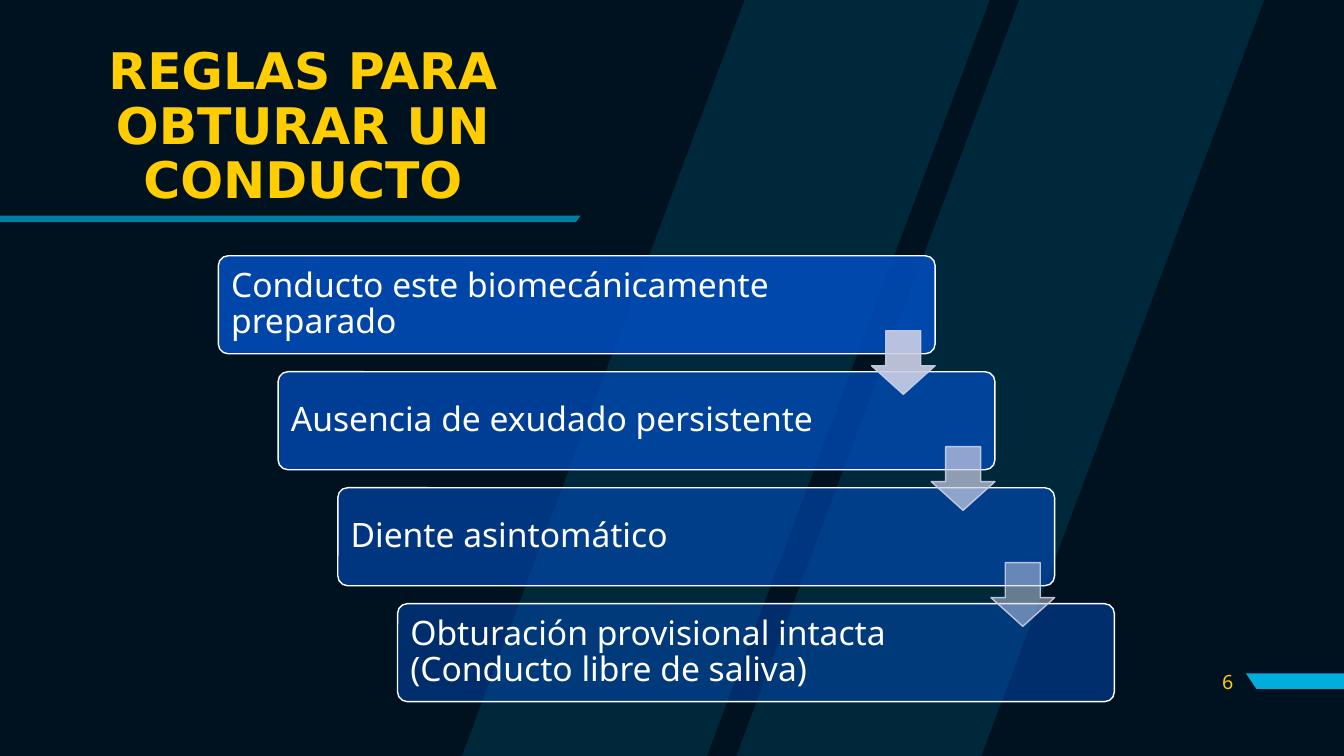
from lxml.etree import SubElement
from pptx import Presentation
from pptx.dml.color import RGBColor
from pptx.enum.shapes import MSO_SHAPE as Shape
from pptx.enum.text import MSO_ANCHOR as Anchor, PP_ALIGN as Align
from pptx.oxml.ns import qn
from pptx.util import Pt

COLORS = {
    "night": "00111F",
    "cyan": "00AEDE",
    "yellow": "FFCD00",
    "blue": "004CB9",
    "lilac": "CCD0E6",
    "white": "FFFFFF",
}
STEPS = [
    ("Conducto este biomecánicamente preparado", 90),
    ("Ausencia de exudado persistente", 77),
    ("Diente asintomático", 63),
    ("Obturación provisional intacta (Conducto libre de saliva)", 50),
]
ARROW_OPACITIES = [90, 70, 50]


def paint(fill, color, opacity=100):
    """Give a fill a solid colour with an opacity in percent."""
    fill.solid()
    fill.fore_color.rgb = RGBColor.from_string(COLORS[color])
    if opacity < 100:
        tone = fill._xPr.find(qn("a:solidFill"))[0]
        SubElement(tone, qn("a:alpha")).set("val", str(opacity * 1000))


def add_polygon(page, points, color, opacity=100):
    """Draw a closed outline without a border."""
    builder = page.shapes.build_freeform(Pt(points[0][0]), Pt(points[0][1]), scale=1)
    builder.add_line_segments([(Pt(x), Pt(y)) for x, y in points[1:]], close=True)
    polygon = builder.convert_to_shape()
    polygon.shadow.inherit = False
    paint(polygon.fill, color, opacity)
    polygon.line.fill.background()


def add_block(page, kind, box, adjustments, fill, outline):
    """Draw a preset shape with fill and outline given as colour and opacity."""
    block = page.shapes.add_shape(kind, *map(Pt, box))
    block.shadow.inherit = False
    for index, value in enumerate(adjustments):
        block.adjustments[index] = value
    paint(block.fill, *fill)
    block.line.width = Pt(1)
    paint(block.line.fill, *outline)


def add_text(page, box, text, font, size, color, align=Align.LEFT, bold=False,
             spacing=1.0, margin=3.6):
    """Place one vertically centred paragraph in a box."""
    frame = page.shapes.add_textbox(*map(Pt, box)).text_frame
    frame.word_wrap = True
    frame.vertical_anchor = Anchor.MIDDLE
    frame.margin_left = frame.margin_right = Pt(7.2)
    frame.margin_top = frame.margin_bottom = Pt(margin)
    para = frame.paragraphs[0]
    para.alignment = align
    para.line_spacing = spacing
    span = para.add_run()
    span.text = text
    span.font.name = font
    span.font.size = Pt(size)
    span.font.bold = bold
    span.font.color.rgb = RGBColor.from_string(COLORS[color])


def add_backdrop(page, width, height):
    """Colour the page and draw its two slanted bands."""
    paint(page.background.fill, "night")
    band, gap, slant = 175, 21, 202
    for index in range(2):
        left = 330 + index * (band + gap)
        top_left = left + slant
        add_polygon(page, [(top_left, 0), (left, height), (left + band, height),
                           (top_left + band, 0)], "cyan", 15)


def add_heading(page, left, top, width, height):
    """Place the title and the tapered rule under it."""
    add_text(page, (left, top, width, height), "REGLAS PARA OBTURAR UN CONDUCTO",
             "DejaVu Sans", 36, "yellow", Align.CENTER, True, 0.9)
    rule, right = top + height + 31.5, left + width
    add_polygon(page, [(0, rule), (0, rule + 4.7), (right - 4, rule + 4.7),
                       (right - 0.5, rule)], "cyan", 70)


def add_page_number(page, left, top, width, height):
    """Place the page number and the bar reaching the right edge."""
    add_text(page, (left, top, width, height), "6", "Noto Sans", 14, "yellow",
             Align.RIGHT)
    bar, start = top + 8.6, left + width + 2
    add_polygon(page, [(960, bar), (960, bar + 11), (start + 7.5, bar + 11),
                       (start, bar)], "cyan")


def add_staircase(page, left, top, width, height):
    """Lay the rules out as descending steps joined by arrows."""
    step_width, step_height, arrow = 512, 70, 45.5
    last = len(STEPS) - 1
    shift, drop = (width - step_width) / last, (height - step_height) / last
    for index, (text, opacity) in enumerate(STEPS):
        x, y = left + index * shift, top + index * drop
        add_block(page, Shape.ROUNDED_RECTANGLE, (x, y, step_width, step_height),
                  [0.1], ("blue", opacity), ("white",))
        add_text(page, (x + 2, y + 2, 420, step_height - 4), text,
                 "Noto Sans", 24, "white", spacing=0.9, margin=7.2)
    for index, opacity in enumerate(ARROW_OPACITIES):
        x = left + index * shift + step_width - arrow
        y = top + index * drop + 53.5
        add_block(page, Shape.DOWN_ARROW, (x, y, arrow, arrow), [0.55, 0.45],
                  ("lilac", opacity), ("lilac", 90))


def main():
    """Build the slide and save it."""
    deck = Presentation()
    deck.slide_width, deck.slide_height = Pt(960), Pt(540)
    page = deck.slides.add_slide(deck.slide_layouts[6])
    add_backdrop(page, 960, 540)
    add_heading(page, 17.3, 60.5, 398, 62)
    add_page_number(page, 844.5, 472.5, 43.5, 29)
    add_staircase(page, 156, 182.7, 640, 318.5)
    deck.save("out.pptx")


if __name__ == "__main__":
    main()
